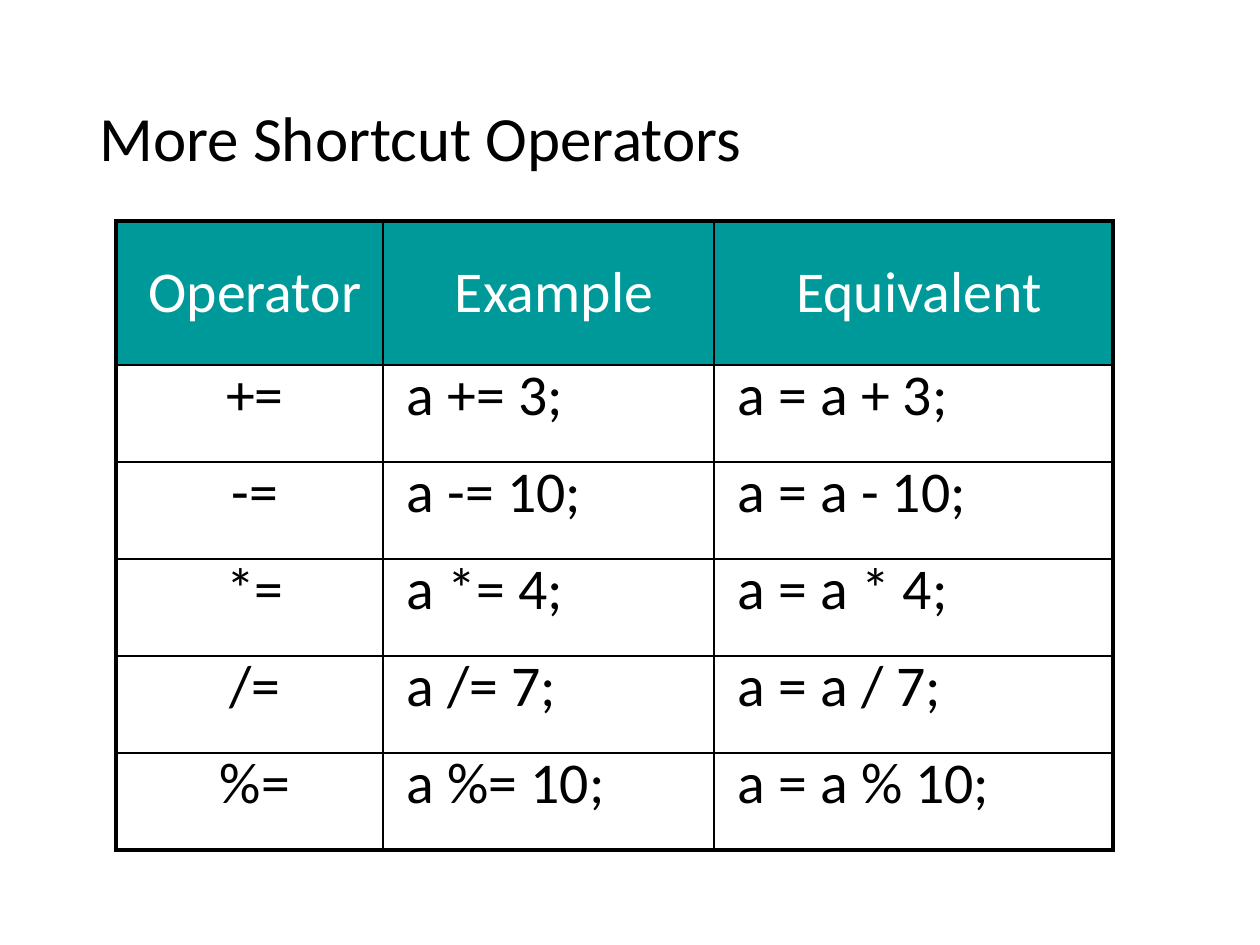
from lxml import etree
from pptx import Presentation
from pptx.dml.color import RGBColor
from pptx.enum.text import MSO_ANCHOR, PP_ALIGN
from pptx.oxml.ns import qn
from pptx.util import Emu, Pt

PX_PER_INCH = 126
LEFT, CENTER = PP_ALIGN.LEFT, PP_ALIGN.CENTER
TOP, MIDDLE = MSO_ANCHOR.TOP, MSO_ANCHOR.MIDDLE
FONT = "Calibri"
COLORS = {"text": "000000", "header_text": "FFFFFF", "header": "009999",
          "body": "FFFFFF", "border": "000000"}
INNER_LINE, OUTER_LINE = Pt(1), Pt(2.25)

TITLE = "More Shortcut Operators"
ROWS = [
    ("Operator", "Example", "Equivalent"),
    ("+=", "a += 3;", "a = a + 3;"),
    ("-=", "a -= 10;", "a = a - 10;"),
    ("*=", "a *= 4;", "a = a * 4;"),
    ("/=", "a /= 7;", "a = a / 7;"),
    ("%=", "a %= 10;", "a = a % 10;"),
]
COLUMN_WIDTHS = [267, 331, 399]
ROW_HEIGHTS = [144] + [97] * (len(ROWS) - 1)


def px(length):
    return Emu(round(length * 914400 / PX_PER_INCH))


def color(name):
    return RGBColor.from_string(COLORS[name])


def set_attributes(target, values):
    for name, value in values.items():
        setattr(target, name, value)


def write_text(frame, text, size, color_name, alignment=LEFT, indent=0):
    paragraph = frame.paragraphs[0]
    set_attributes(paragraph, {"alignment": alignment, "line_spacing": 0.9})
    if indent:
        properties = paragraph._p.get_or_add_pPr()
        properties.set("marL", str(px(indent)))
        properties.set("indent", "0")
    run = paragraph.add_run()
    run.text = text
    set_attributes(run.font, {"name": FONT, "size": Pt(size)})
    run.font.color.rgb = color(color_name)


def add_title(slide):
    box = slide.shapes.add_textbox(px(87), px(50), px(1086), px(183))
    set_attributes(box.text_frame, {"word_wrap": True, "vertical_anchor": MIDDLE})
    write_text(box.text_frame, TITLE, 36, "text")


def set_borders(cell, widths):
    properties = cell._tc.get_or_add_tcPr()
    for side, width in widths.items():
        line = etree.SubElement(properties, qn(f"a:ln{side}"), w=str(width))
        fill = etree.SubElement(line, qn("a:solidFill"))
        etree.SubElement(fill, qn("a:srgbClr"), val=COLORS["border"])


def format_cell(cell, text, row, column):
    is_header = row == 0
    is_centered = is_header or column == 0
    set_attributes(cell, {
        "margin_left": 0, "margin_right": 0, "margin_top": 0, "margin_bottom": 0,
        "vertical_anchor": MIDDLE if is_header else TOP,
    })
    # The table outline is heavier than the inner grid
    on_edge = {"L": column == 0, "R": column == len(COLUMN_WIDTHS) - 1,
               "T": row == 0, "B": row == len(ROWS) - 1}
    set_borders(cell, {side: OUTER_LINE if outer else INNER_LINE
                       for side, outer in on_edge.items()})
    cell.fill.solid()
    cell.fill.fore_color.rgb = color("header" if is_header else "body")
    write_text(cell.text_frame, text, 33,
               "header_text" if is_header else "text",
               CENTER if is_centered else LEFT,
               11 if is_centered else 24)


def add_operator_table(slide):
    shape = slide.shapes.add_table(
        len(ROWS), len(COLUMN_WIDTHS), px(116), px(221),
        px(sum(COLUMN_WIDTHS)), px(sum(ROW_HEIGHTS)))
    table = shape.table
    set_attributes(table, {"first_row": False, "horz_banding": False})
    for column, width in zip(table.columns, COLUMN_WIDTHS):
        column.width = px(width)
    for row, height in zip(table.rows, ROW_HEIGHTS):
        row.height = px(height)
    for row, texts in enumerate(ROWS):
        for column, text in enumerate(texts):
            format_cell(table.cell(row, column), text, row, column)


def main():
    presentation = Presentation()
    set_attributes(presentation, {"slide_width": px(1260), "slide_height": px(945)})
    slide = presentation.slides.add_slide(presentation.slide_layouts[6])
    add_title(slide)
    add_operator_table(slide)
    presentation.save("out.pptx")


if __name__ == "__main__":
    main()
